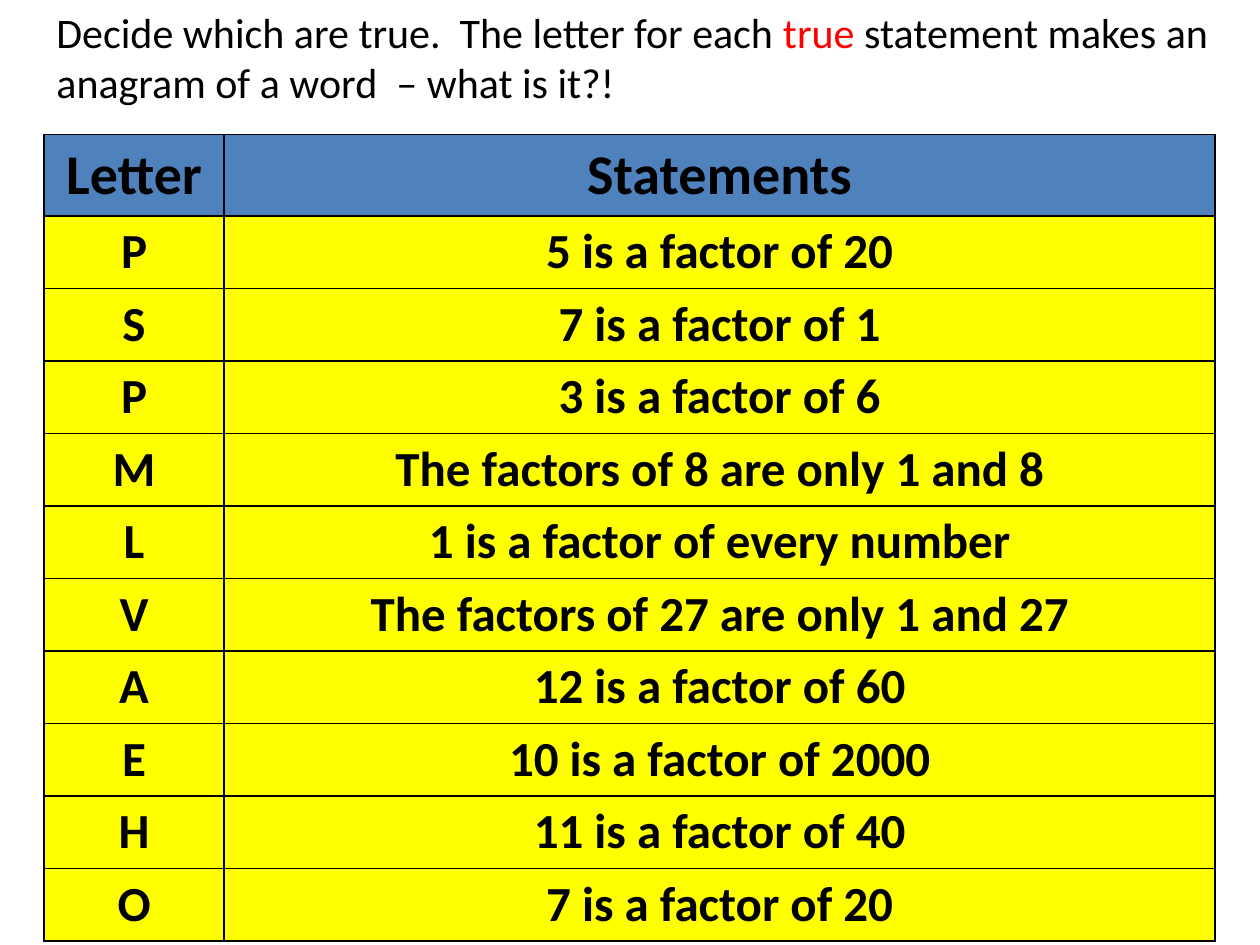
from pptx import Presentation
from pptx.dml.color import RGBColor
from pptx.enum.text import MSO_AUTO_SIZE as Fit, PP_ALIGN as Align
from pptx.oxml import parse_xml
from pptx.oxml.ns import nsdecls
from pptx.util import Pt

BLACK = RGBColor(0, 0, 0)
RED = RGBColor(255, 0, 0)
BLUE = RGBColor(0x4F, 0x81, 0xBD)
YELLOW = RGBColor(255, 255, 0)

TASK = [
    ("Decide which are true.  The letter for each ", BLACK),
    ("true", RED),
    (" statement makes an anagram of a word  – what is it?!", BLACK),
]
ROWS = [
    ("Letter", "Statements"),
    ("P", "5 is a factor of 20"),
    ("S", "7 is a factor of 1"),
    ("P", "3 is a factor of 6"),
    ("M", "The factors of 8 are only 1 and 8"),
    ("L", "1 is a factor of every number"),
    ("V", "The factors of 27 are only 1 and 27"),
    ("A", "12 is a factor of 60"),
    ("E", "10 is a factor of 2000"),
    ("H", "11 is a factor of 40"),
    ("O", "7 is a factor of 20"),
]
LEFT, TOP, HIGH = 25.2, 77, 453.6
COLS = (102.8, 566.4)
HEAD, BODY = 43.2, 38.9


def write(para, text, size=24, color=BLACK, bold=False, align=Align.LEFT):
    para.alignment = align
    run = para.add_run()
    run.text = text
    font = run.font
    font.name, font.size, font.bold = "Calibri", Pt(size), bold
    font.color.rgb = color


def border(cell):
    """Draw a 1 pt black line on all four sides of the cell."""
    props = cell._tc.get_or_add_tcPr()
    for i, side in enumerate(("lnL", "lnR", "lnT", "lnB")):
        props.insert(i, parse_xml(
            f'<a:{side} {nsdecls("a")} w="{Pt(1)}"><a:solidFill>'
            f'<a:srgbClr val="{BLACK}"/></a:solidFill></a:{side}>'))


def add_grid(slide):
    frame = slide.shapes.add_table(
        len(ROWS), len(COLS), Pt(LEFT), Pt(TOP), Pt(sum(COLS)), Pt(HIGH))
    table = frame.table
    for col, wide in zip(table.columns, COLS):
        col.width = Pt(wide)
    for r, texts in enumerate(ROWS):
        high, size, fill = (BODY, 28, YELLOW) if r else (HEAD, 32, BLUE)
        table.rows[r].height = Pt(high)
        for c, text in enumerate(texts):
            cell = table.cell(r, c)
            cell.fill.solid()
            cell.fill.fore_color.rgb = fill
            border(cell)
            write(cell.text_frame.paragraphs[0], text, size=size,
                  bold=True, align=Align.CENTER)
    frame.height = Pt(HIGH)


def add_task(slide):
    box = slide.shapes.add_textbox(Pt(LEFT), Pt(0), Pt(674.6), Pt(65.5))
    frame = box.text_frame
    frame.word_wrap = True
    frame.auto_size = Fit.SHAPE_TO_FIT_TEXT
    for text, color in TASK:
        write(frame.paragraphs[0], text, color=color)


def main():
    deck = Presentation()
    deck.slide_width, deck.slide_height = Pt(720), Pt(540)
    slide = deck.slides.add_slide(deck.slide_layouts[6])
    add_grid(slide)
    add_task(slide)
    deck.save("out.pptx")


if __name__ == "__main__":
    main()
